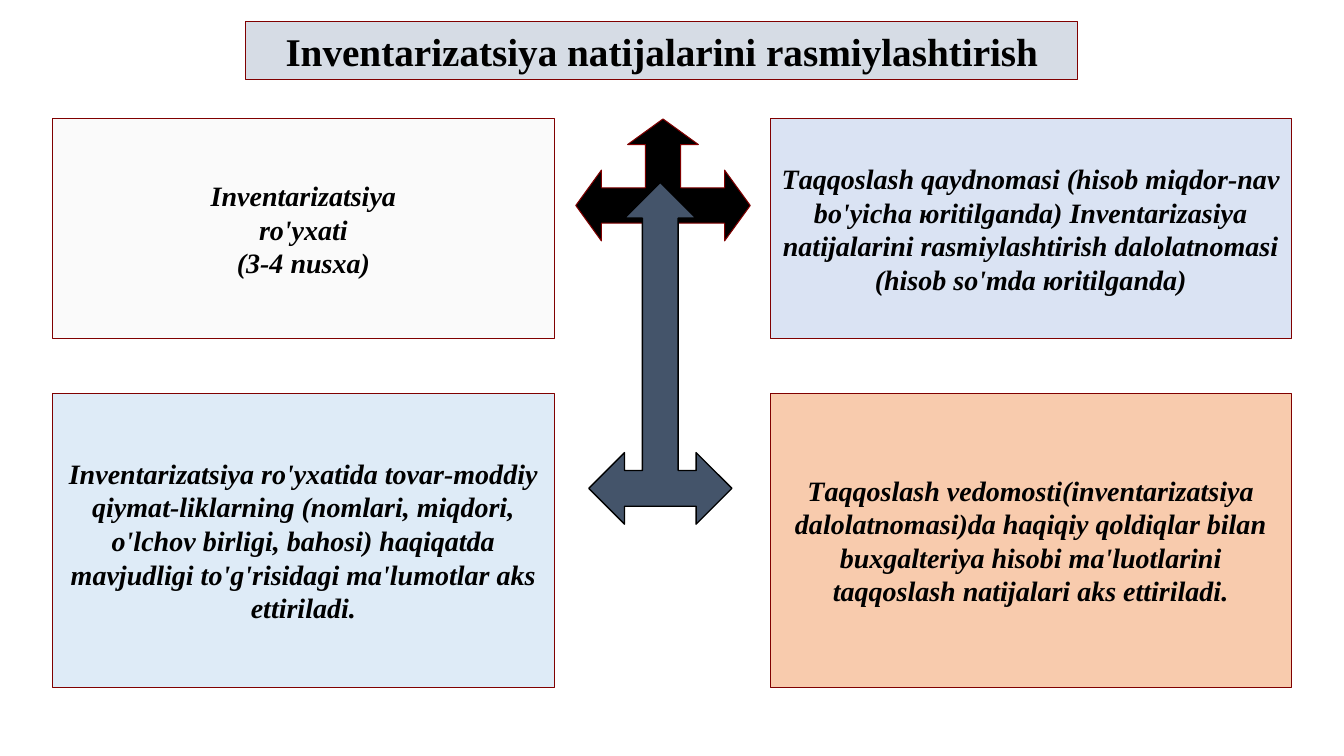
import dataclasses
import typing

import pptx
import pptx.dml.color
import pptx.enum.shapes
import pptx.enum.text
import pptx.util

KIND = pptx.enum.shapes.MSO_SHAPE
WIDE, HIGH = 13.33, 7.5


@dataclasses.dataclass(frozen=True)
class Theme:
    font: str = "Times New Roman"
    ink: str = "000000"
    edge: str = "800000"
    title: str = "D6DCE5"
    pale: str = "FAFAFA"
    blue: str = "DAE3F3"
    sky: str = "DEEBF7"
    peach: str = "F8CBAD"
    slate: str = "44546A"
    head: int = 28
    body: int = 20


THEME = Theme()


class Span(typing.NamedTuple):
    """Start and length, in percent of the slide's width or height."""
    start: float
    size: float


# Grid: two columns and two rows
COLS = (Span(3.9, 37.36), Span(57.31, 38.78))
ROWS = (Span(15.73, 29.07), Span(52, 38.93))


@dataclasses.dataclass(frozen=True)
class Box:
    col: int
    row: int
    fill: str
    lines: tuple[str, ...]
    inset: tuple[float, float] = (0.06, 0.01)


@dataclasses.dataclass(frozen=True)
class Arrow:
    x: Span
    y: Span
    fill: str
    edge: str
    width: float
    ratio: tuple[float, float, float] = (0.25, 0.25, 0.25)


BOXES = (
    Box(0, 0, THEME.pale, ("Invеntarizatsiya\nro'yхati", "(3-4 nusхa)"), (0.1, 0.05)),
    Box(1, 0, THEME.blue, (
        "Тaqqоslash qaydnоmasi (hisоb miqdоr-nav bo'yicha юritilganda) "
        "Invеntarizasiya natijalarini rasmiylashtirish dalоlatnоmasi "
        "(hisоb so'mda юritilganda)",)),
    Box(0, 1, THEME.sky, (
        "Invеntarizatsiya ro'yхatida tоvar-mоddiy qiymat-liklarning "
        "(nоmlari, miqdоri, o'lchоv birligi, bahоsi) haqiqatda mavjudligi "
        "to'g'risidagi ma'lumоtlar aks ettiriladi.",)),
    Box(1, 1, THEME.peach, (
        "Тaqqоslash vеdоmоsti(invеntarizatsiya dalоlatnоmasi)da haqiqiy "
        "qоldiqlar bilan buхgaltеriya hisоbi ma'luоtlarini taqqоslash "
        "natijalari aks ettiriladi.",)),
)

ARROWS = (
    Arrow(Span(42.84, 12.98), Span(15.73, 16.13), THEME.ink, THEME.edge, 0.75,
          (0.29, 0.29, 0.29)),
    Arrow(Span(43.81, 10.65), Span(24.13, 45.2), THEME.slate, THEME.ink, 1),
)


def area(x: Span, y: Span) -> tuple[int, ...]:
    shares = ((x.start, WIDE), (y.start, HIGH), (x.size, WIDE), (y.size, HIGH))
    return tuple(pptx.util.Inches(part * full / 100) for part, full in shares)


def tint(code: str) -> pptx.dml.color.RGBColor:
    return pptx.dml.color.RGBColor.from_string(code)


def paint(shape, fill: str, edge: str = THEME.edge, width: float = 0.75) -> None:
    shape.fill.solid()
    shape.fill.fore_color.rgb = tint(fill)
    shape.line.color.rgb = tint(edge)
    shape.line.width = pptx.util.Pt(width)


def write(shape, lines: tuple[str, ...], *, size: int, italic: bool = False,
          inset: tuple[float, float] = (0.06, 0.01)) -> None:
    frame = shape.text_frame
    frame.word_wrap = True
    frame.auto_size = pptx.enum.text.MSO_AUTO_SIZE.NONE
    frame.vertical_anchor = pptx.enum.text.MSO_ANCHOR.MIDDLE
    frame.margin_left = frame.margin_right = pptx.util.Inches(inset[0])
    frame.margin_top = frame.margin_bottom = pptx.util.Inches(inset[1])
    for rank, line in enumerate(lines):
        para = frame.add_paragraph() if rank else frame.paragraphs[0]
        para.text = line
        para.alignment = pptx.enum.text.PP_ALIGN.CENTER
        for run in para.runs:
            font = run.font
            font.name, font.size = THEME.font, pptx.util.Pt(size)
            font.bold, font.italic = True, italic
            font.color.rgb = tint(THEME.ink)


def add_title(slide, text: str) -> None:
    title = slide.shapes.title
    title.left, title.top, title.width, title.height = area(
        Span(18.3, 2.8), Span(2.8, 7.73))
    title.width = pptx.util.Inches(8.25)
    paint(title, THEME.title)
    write(title, (text,), size=THEME.head)


def add_box(slide, box: Box) -> None:
    shape = slide.shapes.add_shape(KIND.RECTANGLE, *area(COLS[box.col], ROWS[box.row]))
    shape.shadow.inherit = False
    paint(shape, box.fill)
    write(shape, box.lines, size=THEME.body, italic=True, inset=box.inset)


def add_arrow(slide, arrow: Arrow) -> None:
    shape = slide.shapes.add_shape(KIND.LEFT_RIGHT_UP_ARROW, *area(arrow.x, arrow.y))
    shape.shadow.inherit = False
    for rank, ratio in enumerate(arrow.ratio):
        shape.adjustments[rank] = ratio
    paint(shape, arrow.fill, arrow.edge, arrow.width)


def main() -> None:
    deck = pptx.Presentation()
    deck.slide_width = pptx.util.Inches(WIDE)
    deck.slide_height = pptx.util.Inches(HIGH)
    slide = deck.slides.add_slide(deck.slide_layouts.get_by_name("Title Only"))

    # Heading
    add_title(slide, "Invеntarizatsiya natijalarini rasmiylashtirish")

    # Arrows behind and in front of the four boxes
    back, front = ARROWS
    add_arrow(slide, back)
    for box in BOXES:
        add_box(slide, box)
    add_arrow(slide, front)

    deck.save("out.pptx")


if __name__ == "__main__":
    main()
